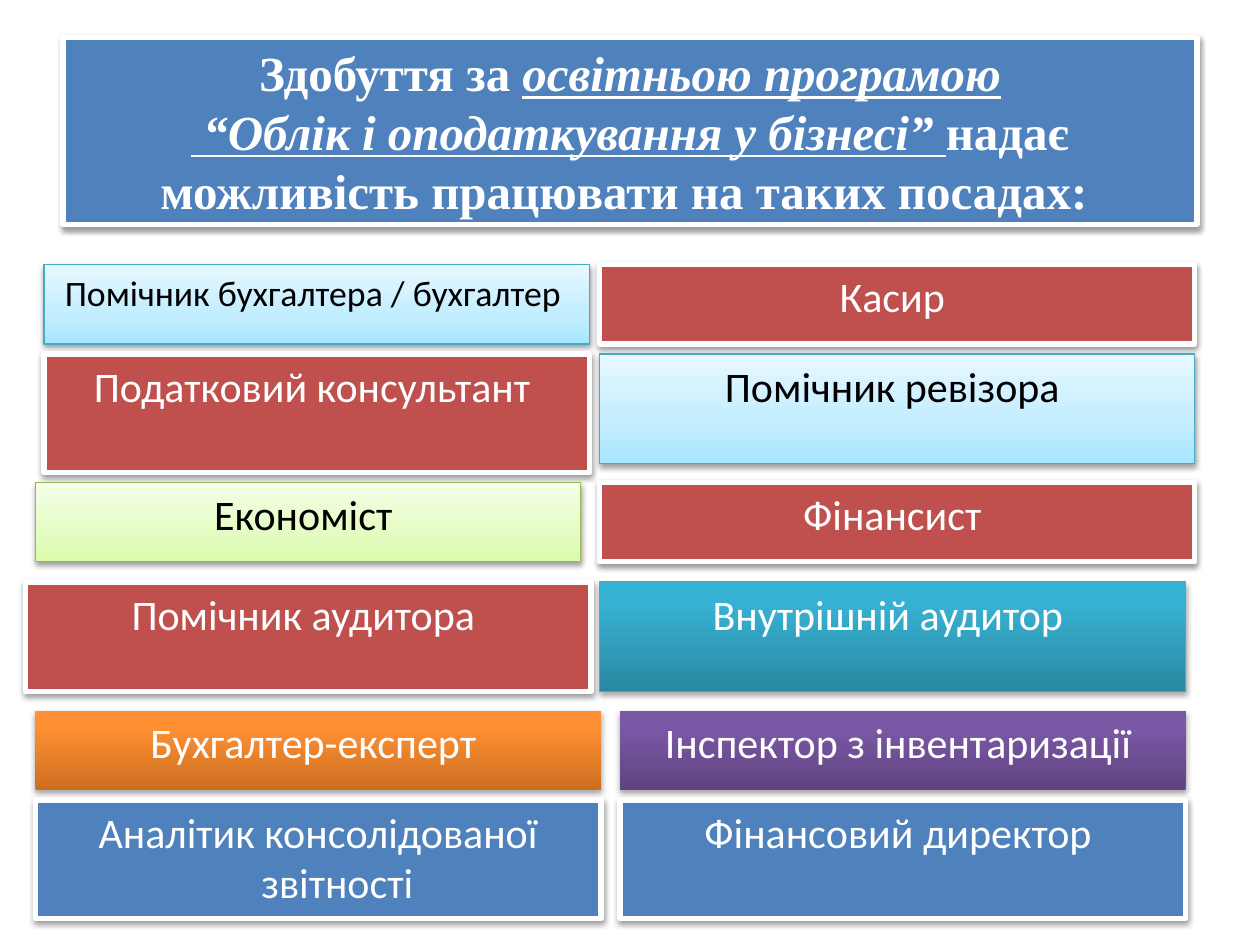
from lxml import etree
from pptx import Presentation
from pptx.dml.color import RGBColor
from pptx.enum.shapes import MSO_SHAPE
from pptx.enum.text import MSO_ANCHOR, PP_ALIGN
from pptx.oxml import parse_xml
from pptx.util import Emu, Inches, Pt

RECT = MSO_SHAPE.RECTANGLE
TOP, MIDDLE = MSO_ANCHOR.TOP, MSO_ANCHOR.MIDDLE
CENTER = PP_ALIGN.CENTER
NS = "http://schemas.openxmlformats.org/drawingml/2006/main"

WHITE = RGBColor(0xFF, 0xFF, 0xFF)
BLACK = RGBColor(0, 0, 0)
BLUE = RGBColor(0x4F, 0x81, 0xBD)
RED = RGBColor(0xC0, 0x50, 0x4D)
AQUA_LINE = RGBColor(0x46, 0xAA, 0xC5)
GREEN_LINE = RGBColor(0x98, 0xB9, 0x55)

# Box styles: fill (colour or bottom-to-top stops), line, line width, text, shadow
SOFT, STRONG = (38, 20000), (35, 23000)  # shadow opacity in percent, distance
STYLES = {
    "blue": (BLUE, WHITE, 3, WHITE, SOFT),
    "red": (RED, WHITE, 3, WHITE, SOFT),
    "pale aqua": ([(0, "A7E6FF"), (35, "C1EDFF"), (100, "E7F8FF")],
                  AQUA_LINE, 0.75, BLACK, SOFT),
    "pale green": ([(0, "DAFDA7"), (35, "E4FCC2"), (100, "F5FFE7")],
                   GREEN_LINE, 0.75, BLACK, SOFT),
    "aqua": ([(0, "2A88A2"), (80, "37B1D2"), (100, "34B4D6")],
             AQUA_LINE, 0.75, WHITE, STRONG),
    "orange": ([(0, "CC6E20"), (80, "FF9034"), (100, "FF9136")],
               None, 0, WHITE, STRONG),
    "purple": ([(0, "5F4480"), (80, "7B58A6"), (100, "7C57A8")],
               None, 0, WHITE, STRONG),
}

# Title lines, each made of (text, emphasised) runs
TITLE = [
    [("Здобуття за ", False), ("освітньою програмою", True)],
    [(" “Облік і оподаткування у бізнесі” ", True),
     ("надає можливість працювати на таких посадах: ", False)],
]

# Rows of job boxes: top, then (text, style, left, width, height) for each column
LOW, MID, HIGH = 0.63, 0.87, 0.94
JOBS = [
    (2.10, [("Помічник бухгалтера / бухгалтер ", "pale aqua", 0.35, 4.33, LOW),
            ("Касир ", "red", 4.76, 4.72, LOW)]),
    (2.81, [("Податковий консультант ", "red", 0.35, 4.33, HIGH),
            ("Помічник ревізора ", "pale aqua", 4.76, 4.72, MID)]),
    (3.83, [("Економіст ", "pale green", 0.28, 4.33, LOW),
            ("Фінансист ", "red", 4.76, 4.72, LOW)]),
    (4.62, [("Помічник аудитора ", "red", 0.20, 4.49, MID),
            ("Внутрішній аудитор ", "aqua", 4.76, 4.65, MID)]),
    (5.64, [("Бухгалтер-експерт ", "orange", 0.28, 4.49, LOW),
            ("Інспектор з інвентаризації ", "purple", 4.92, 4.49, LOW)]),
    (6.35, [("Аналітик консолідованої звітності ", "blue", 0.28, 4.49, HIGH),
            ("Фінансовий директор ", "blue", 4.92, 4.49, HIGH)]),
]
SIZES = {"Помічник бухгалтера / бухгалтер ": 20.4}  # all others use 24
HANGING = Inches(0.38)


def gradient(stops):
    gs = "".join(f'<a:gs pos="{pos * 1000}"><a:srgbClr val="{color}"/></a:gs>'
                 for pos, color in stops)
    return parse_xml(f'<a:gradFill xmlns:a="{NS}" rotWithShape="1"><a:gsLst>{gs}'
                     '</a:gsLst><a:lin ang="16200000" scaled="0"/></a:gradFill>')


def add_shadow(sp, opacity, distance):
    sp.shadow.inherit = False
    effects = sp._element.spPr.find(f"{{{NS}}}effectLst")
    shadow = etree.SubElement(effects, f"{{{NS}}}outerShdw", blurRad="40000",
                              dist=str(distance), dir="5400000", rotWithShape="0")
    color = etree.SubElement(shadow, f"{{{NS}}}srgbClr", val="000000")
    etree.SubElement(color, f"{{{NS}}}alpha", val=str(opacity * 1000))


def add_box(slide, style, left, top, width, height, anchor=TOP):
    fill, line, line_width, color, shadow = STYLES[style]
    sp = slide.shapes.add_shape(RECT, *map(Inches, (left, top, width, height)))
    if isinstance(fill, list):
        sp._element.spPr.find(f"{{{NS}}}prstGeom").addnext(gradient(fill))
    else:
        sp.fill.solid()
        sp.fill.fore_color.rgb = fill
    if line is None:
        sp.line.fill.background()
    else:
        sp.line.color.rgb = line
        sp.line.width = Pt(line_width)
    add_shadow(sp, *shadow)
    tf = sp.text_frame
    tf.word_wrap = True
    tf.vertical_anchor = anchor
    p = tf.paragraphs[0]
    p.alignment = CENTER
    p.font.color.rgb = color
    return p


prs = Presentation()
prs.slide_width, prs.slide_height = Inches(10), Inches(7.5)
s = prs.slides.add_slide(prs.slide_layouts[6])

# Title
p = add_box(s, "blue", 0.5, 0.3, 9, 1.48, MIDDLE)
p.font.name, p.font.size, p.font.bold = "Times New Roman", Pt(28), True
for i, runs in enumerate(TITLE):
    if i:
        p.add_line_break()
    for text, emphasised in runs:
        r = p.add_run()
        r.text = text
        if emphasised:
            r.font.italic = r.font.underline = True

# Job boxes
for top, boxes in JOBS:
    for text, style, left, width, height in boxes:
        p = add_box(s, style, left, top, width, height)
        pPr = p._p.get_or_add_pPr()
        pPr.set("marL", str(HANGING))
        pPr.set("indent", str(Emu(-HANGING)))
        p.font.name, p.font.size = "Calibri", Pt(SIZES.get(text, 24))
        p.add_run().text = text

prs.save("out.pptx")
